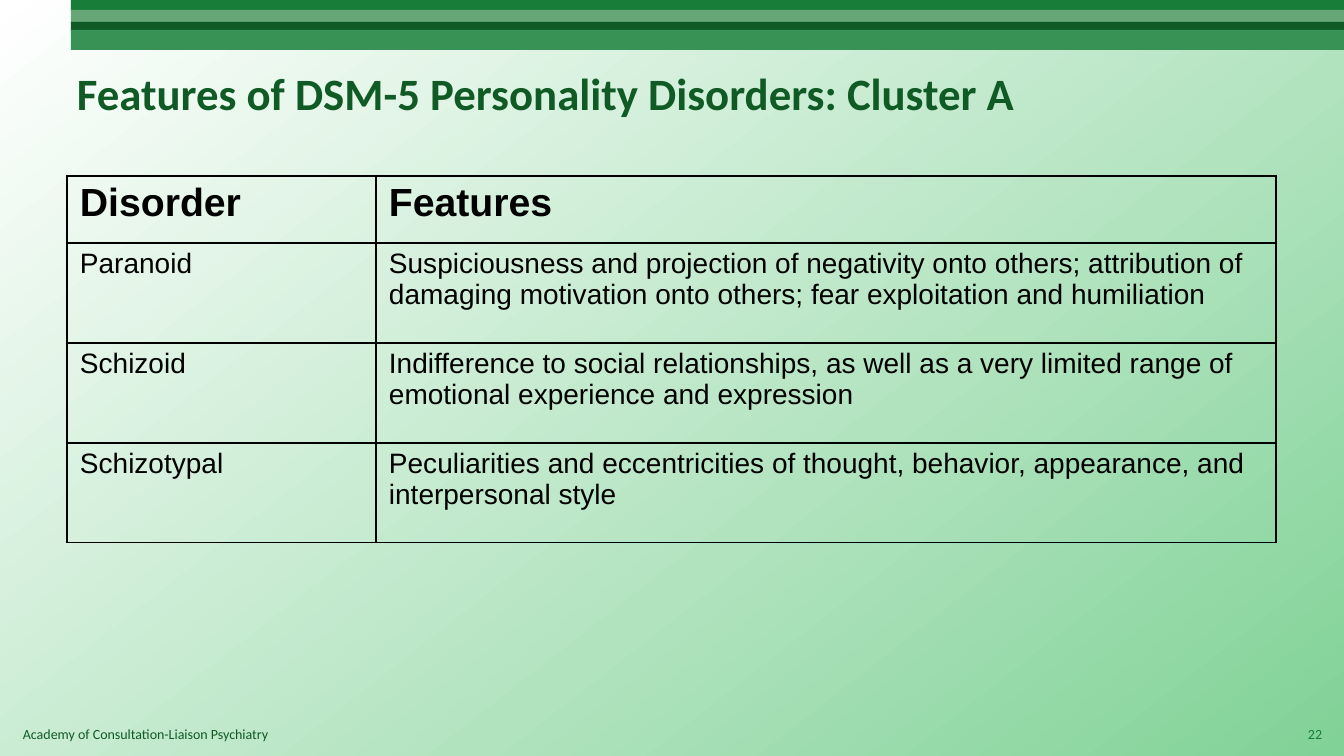
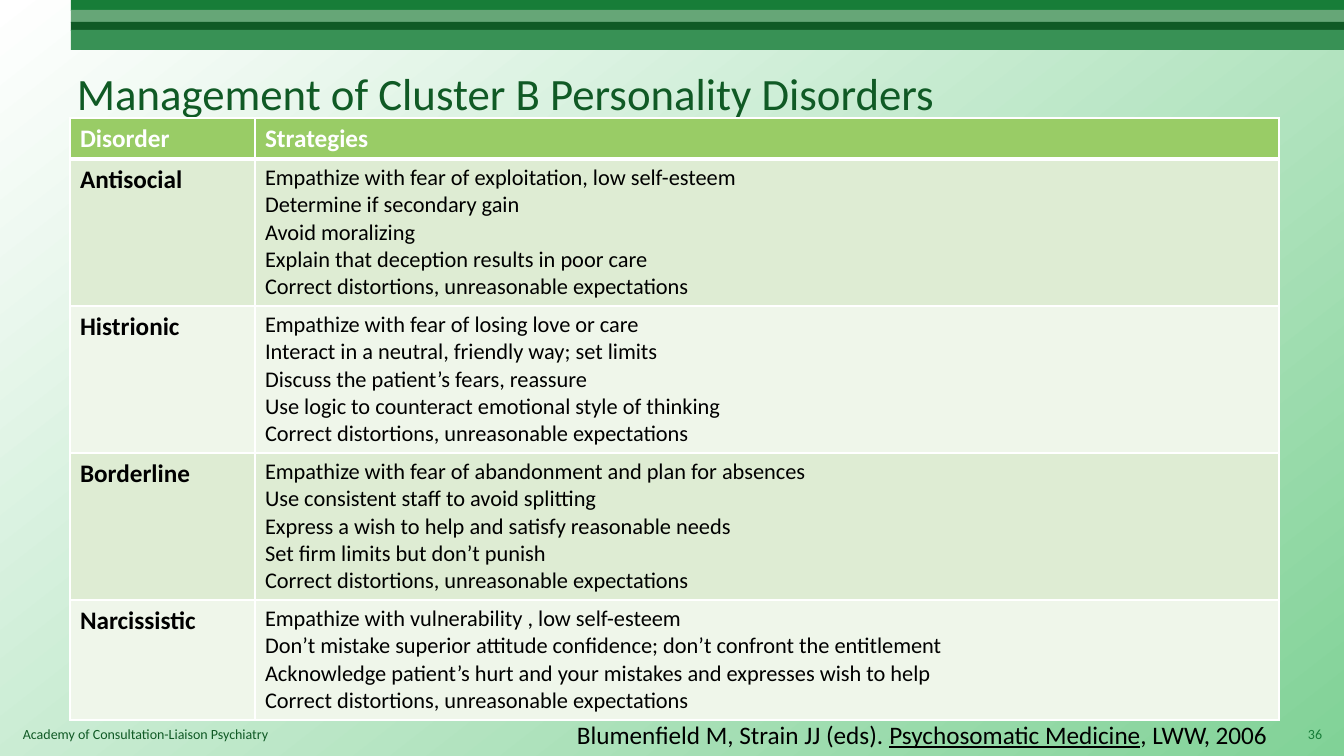
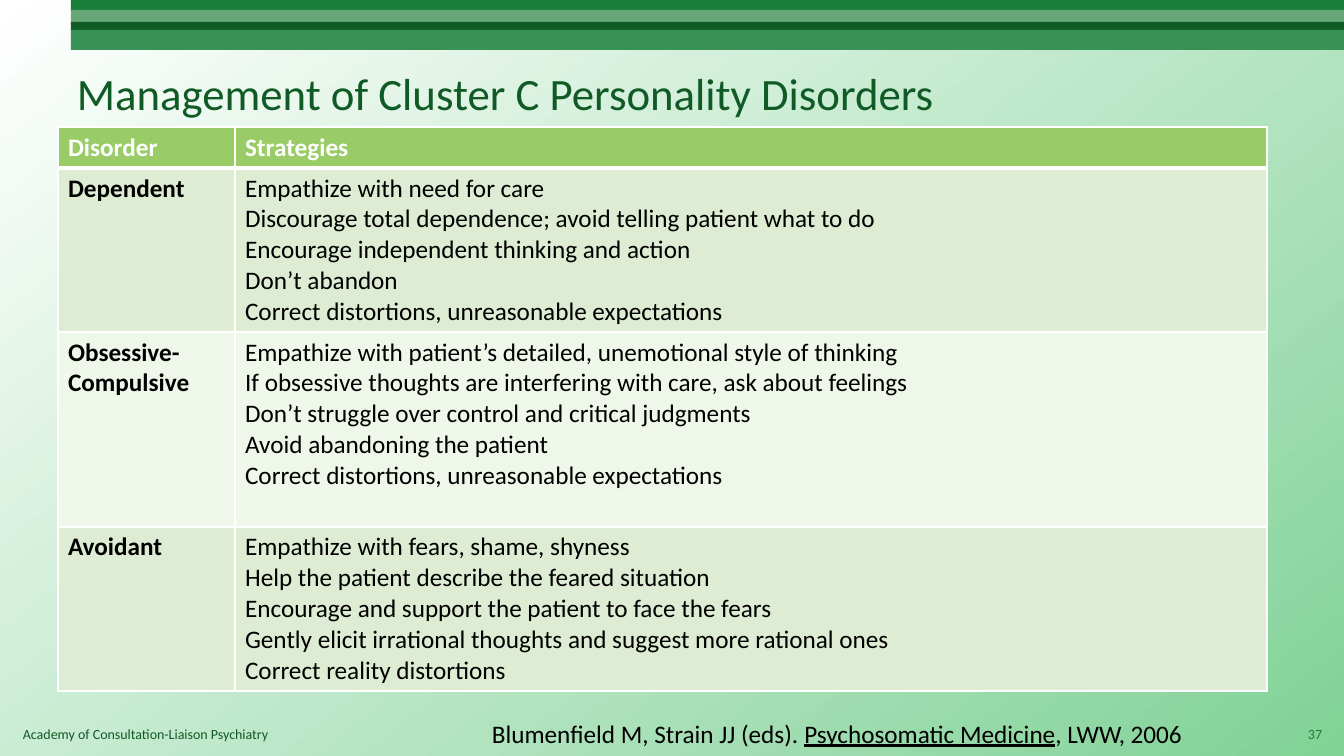
from lxml.etree import SubElement
from pptx import Presentation
from pptx.dml.color import RGBColor
from pptx.enum.shapes import MSO_SHAPE
from pptx.enum.text import MSO_ANCHOR, PP_ALIGN
from pptx.oxml.ns import qn
from pptx.util import Pt

PX = 12192000 / 1344
SLIDE_W, SLIDE_H = 1344, 756

BLACK = RGBColor(0x00, 0x00, 0x00)
WHITE = RGBColor(0xFF, 0xFF, 0xFF)
MINT = RGBColor(0x81, 0xD2, 0x97)
GREEN = RGBColor(0x17, 0x7D, 0x38)
SAGE = RGBColor(0x66, 0xA6, 0x77)
FOREST = RGBColor(0x10, 0x5A, 0x25)
FERN = RGBColor(0x38, 0x91, 0x55)
LIME = RGBColor(0x99, 0xCC, 0x66)
ROW_FILLS = (RGBColor(0xDE, 0xEC, 0xD3), RGBColor(0xEF, 0xF6, 0xEA))

BAND_LEFT = 71
BANDS = [(0, 11, GREEN), (10, 13, SAGE), (22, 9, FOREST), (30, 20, FERN)]
FOOTER = "Academy of Consultation-Liaison Psychiatry"
CITATION = ("Blumenfield M, Strain JJ (eds). ", "Psychosomatic Medicine", ", LWW, 2006")
CORRECT = "Correct distortions, unreasonable expectations"

FEATURES = {
    "title": "Features of DSM-5 Personality Disorders: Cluster A",
    "number": 22,
    "at": (67, 176),
    "columns": (309, 900),
    "heights": (67, 100, 100, 100),
    "rows": [
        ("Disorder", ["Features"]),
        ("Paranoid", ["Suspiciousness and projection of negativity onto others; attribution of "
                      "damaging motivation onto others; fear exploitation and humiliation"]),
        ("Schizoid", ["Indifference to social relationships, as well as a very limited range of "
                      "emotional experience and expression"]),
        ("Schizotypal", ["Peculiarities and eccentricities of thought, behavior, appearance, and "
                         "interpersonal style"]),
    ],
}

MANAGEMENT = [
    {
        "title": "Management of Cluster B Personality Disorders",
        "number": 36,
        "at": (70, 118),
        "columns": (185, 1024),
        "heights": (41, 147, 147, 147, 120),
        "strategy_size": 16,
        "citation_at": (567, 714),
        "rows": [
            ("Disorder", ["Strategies"]),
            ("Antisocial", ["Empathize with fear of exploitation, low self-esteem",
                            "Determine if secondary gain",
                            "Avoid moralizing",
                            "Explain that deception results in poor care",
                            CORRECT]),
            ("Histrionic", ["Empathize with fear of losing love or care",
                            "Interact in a neutral, friendly way; set limits",
                            "Discuss the patient’s fears, reassure",
                            "Use logic to counteract emotional style of thinking",
                            CORRECT]),
            ("Borderline", ["Empathize with fear of abandonment and plan for absences",
                            "Use consistent staff to avoid splitting",
                            "Express a wish to help and satisfy reasonable needs",
                            "Set firm limits but don’t punish",
                            CORRECT]),
            ("Narcissistic", ["Empathize with vulnerability , low self-esteem",
                              "Don’t mistake superior attitude confidence; "
                              "don’t confront the entitlement",
                              "Acknowledge patient’s hurt and your mistakes "
                              "and expresses wish to help",
                              CORRECT]),
        ],
    },
    {
        "title": "Management of Cluster C Personality Disorders",
        "number": 37,
        "at": (58, 127),
        "columns": (177, 1032),
        "heights": (41, 164, 195, 164),
        "strategy_size": 18,
        "citation_at": (482, 713),
        "rows": [
            ("Disorder", ["Strategies"]),
            ("Dependent", ["Empathize with need for care",
                           "Discourage total dependence; avoid telling patient what to do",
                           "Encourage independent thinking and action",
                           "Don’t abandon",
                           CORRECT]),
            ("Obsessive-Compulsive",
             ["Empathize with patient’s detailed, unemotional style of thinking",
              "If obsessive thoughts are interfering with care, ask about feelings",
              "Don’t struggle over control and critical judgments",
              "Avoid abandoning the patient",
              CORRECT]),
            ("Avoidant", ["Empathize with fears, shame, shyness",
                          "Help the patient describe the feared situation",
                          "Encourage and support the patient to face the fears",
                          "Gently elicit irrational thoughts and suggest more rational ones",
                          "Correct reality distortions"]),
        ],
    },
]


def px(*lengths):
    return [round(length * PX) for length in lengths]


def set_font(paragraph, size, color, bold=False, name="Calibri"):
    font = paragraph.font
    font.name, font.size, font.bold = name, Pt(size), bold
    font.color.rgb = color


def add_text(slide, box, runs, size, color, bold=False, anchor=MSO_ANCHOR.TOP,
             align=PP_ALIGN.LEFT):
    frame = slide.shapes.add_textbox(*px(*box)).text_frame
    frame.word_wrap = True
    frame.vertical_anchor = anchor
    paragraph = frame.paragraphs[0]
    paragraph.alignment = align
    for text in runs:
        paragraph.add_run().text = text
    set_font(paragraph, size, color, bold)
    return paragraph


def add_base_slide(prs, content, bold_title=False):
    """Add a slide with the bands, footer, title and slide number."""
    slide = prs.slides.add_slide(prs.slide_layouts[6])
    for top, height, color in BANDS:
        band = slide.shapes.add_shape(
            MSO_SHAPE.RECTANGLE, *px(BAND_LEFT, top, SLIDE_W - BAND_LEFT, height))
        band.shadow.inherit = False
        band.fill.solid()
        band.fill.fore_color.rgb = color
        band.line.fill.background()
    add_text(slide, (13, 721, 932, 27), [FOOTER], 10, FOREST)
    add_text(slide, (67, 30, 1210, 126), [content["title"]], 32, FOREST, bold_title,
             MSO_ANCHOR.MIDDLE)
    add_text(slide, (1279, 714, 53, 40), [str(content["number"])], 10, GREEN,
             anchor=MSO_ANCHOR.MIDDLE, align=PP_ALIGN.RIGHT)
    return slide


def set_borders(cell, color, left=1, right=1, top=1, bottom=1):
    properties = cell._tc.get_or_add_tcPr()
    sides = (("a:lnL", left), ("a:lnR", right), ("a:lnT", top), ("a:lnB", bottom))
    for position, (tag, width) in enumerate(sides):
        line = SubElement(properties, qn(tag), w=str(Pt(width)))
        SubElement(SubElement(line, qn("a:solidFill")), qn("a:srgbClr"), val=str(color))
        properties.insert(position, line)


def add_disorder_table(slide, content, style_cell):
    """Add the table; style_cell(cell, row, col) sets the look of each filled cell."""
    columns, heights, rows = content["columns"], content["heights"], content["rows"]
    table = slide.shapes.add_table(
        len(rows), len(columns), *px(*content["at"], sum(columns), sum(heights))).table
    table.first_row = table.horz_banding = False
    for column, width in zip(table.columns, px(*columns)):
        column.width = width
    for row, height in zip(table.rows, px(*heights)):
        row.height = height
    for r, (disorder, lines) in enumerate(rows):
        for c, text in enumerate((disorder, "\n".join(lines))):
            cell = table.cell(r, c)
            cell.text_frame.text = text
            style_cell(cell, r, c)


def style_feature(cell, row, col):
    cell.margin_left, cell.margin_right = px(13, 13)
    cell.fill.background()
    set_borders(cell, BLACK, left=1 if col else 2.25, right=2.25 if col else 1,
                top=1 if row else 2.25)
    for paragraph in cell.text_frame.paragraphs:
        set_font(paragraph, 20 if row else 28, BLACK, row == 0, "Arial")


def style_strategy(cell, row, col, strategy_size):
    cell.fill.solid()
    cell.fill.fore_color.rgb = ROW_FILLS[(row - 1) % 2] if row else LIME
    set_borders(cell, WHITE, top=3 if row == 1 else 1, bottom=1 if row else 3)
    is_strategy = row > 0 and col == 1
    for paragraph in cell.text_frame.paragraphs:
        set_font(paragraph, strategy_size if is_strategy else 18,
                 BLACK if row else WHITE, not is_strategy)


def set_background(master):
    fill = master.background.fill
    fill.gradient()
    fill.gradient_angle = 308
    for stop, color in zip(fill.gradient_stops, (WHITE, MINT)):
        stop.color.rgb = color


def main():
    prs = Presentation()
    prs.slide_width, prs.slide_height = px(SLIDE_W, SLIDE_H)
    set_background(prs.slide_master)

    slide = add_base_slide(prs, FEATURES, bold_title=True)
    add_disorder_table(slide, FEATURES, style_feature)

    for content in MANAGEMENT:
        slide = add_base_slide(prs, content)
        size = content["strategy_size"]
        add_disorder_table(slide, content,
                           lambda cell, row, col: style_strategy(cell, row, col, size))
        citation = add_text(slide, (*content["citation_at"], 740, 40), CITATION, 18, BLACK)
        citation.runs[1].font.underline = True

    prs.save("out.pptx")


if __name__ == "__main__":
    main()
